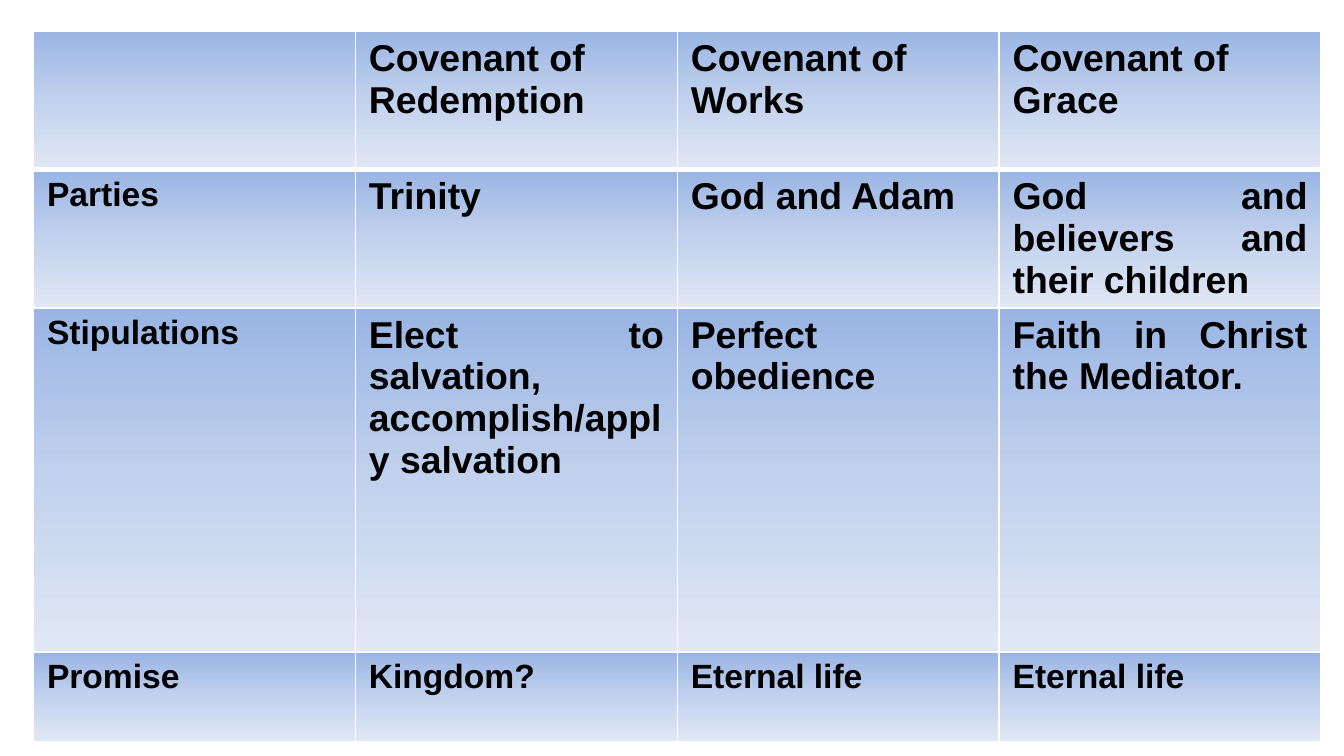
from dataclasses import dataclass

from lxml.etree import SubElement
from pptx import Presentation
from pptx.dml.color import RGBColor
from pptx.enum.text import PP_ALIGN
from pptx.oxml.ns import qn
from pptx.util import Inches, Pt


@dataclass(frozen=True)
class Theme:
    font: str = "Arial"
    text: str = "000000"
    border: str = "FFFFFF"
    gradient: tuple = ((0, "9AB5E4"), (50, "C2D1ED"), (100, "E1E8F5"))
    label_size: int = 18
    body_size: int = 20
    thin: int = 1
    thick: int = 3


THEME = Theme()

COVENANTS = [
    ["", "Covenant of Redemption", "Covenant of Works", "Covenant of Grace"],
    ["Parties", "Trinity", "God and Adam", "God and believers and their children"],
    ["Stipulations", "Elect to salvation, accomplish/apply salvation",
     "Perfect obedience", "Faith in Christ the Mediator."],
    ["Promise", "Kingdom?", "Eternal life", "Eternal life"],
]
ROW_HEIGHTS = [1.03, 0.94, 2.56, 0.67]
TABLE_WIDTH = 9.58
TABLE_HEIGHT = 5.24


def add_color(parent, color):
    SubElement(parent, qn("a:srgbClr"), val=color)


def set_borders(cell, top, bottom):
    tc_pr = cell._tc.get_or_add_tcPr()
    widths = {"L": THEME.thin, "R": THEME.thin, "T": top, "B": bottom}
    for side, width in widths.items():
        line = SubElement(tc_pr, qn(f"a:ln{side}"), w=str(int(Pt(width))))
        add_color(SubElement(line, qn("a:solidFill")), THEME.border)


def set_gradient(cell):
    fill = SubElement(cell._tc.get_or_add_tcPr(), qn("a:gradFill"), rotWithShape="1")
    stops = SubElement(fill, qn("a:gsLst"))
    for percent, color in THEME.gradient:
        add_color(SubElement(stops, qn("a:gs"), pos=str(percent * 1000)), color)
    SubElement(fill, qn("a:lin"), ang=str(90 * 60000), scaled="0")


def set_text(cell, text, size, align):
    p = cell.text_frame.paragraphs[0]
    p.alignment = align
    r = p.add_run()
    r.text = text
    r.font.name = THEME.font
    r.font.size = Pt(size)
    r.font.bold = True
    r.font.color.rgb = RGBColor.from_string(THEME.text)


def format_cell(cell, text, row, col):
    top = THEME.thick if row == 1 else THEME.thin
    bottom = THEME.thick if row == 0 else THEME.thin
    set_borders(cell, top, bottom)
    set_gradient(cell)
    if text:
        is_small = col == 0 or row == len(COVENANTS) - 1
        size = THEME.label_size if is_small else THEME.body_size
        align = PP_ALIGN.JUSTIFY if row and col else PP_ALIGN.LEFT
        set_text(cell, text, size, align)


def add_covenant_table(s):
    frame = s.shapes.add_table(len(COVENANTS), len(COVENANTS[0]),
                               Inches(0.25), Inches(0.23),
                               Inches(TABLE_WIDTH), Inches(TABLE_HEIGHT))
    table = frame.table
    table.horz_banding = False
    for row, height in zip(table.rows, ROW_HEIGHTS):
        row.height = Inches(height)
    frame.height = Inches(TABLE_HEIGHT)
    for i, texts in enumerate(COVENANTS):
        for j, text in enumerate(texts):
            format_cell(table.cell(i, j), text, i, j)


def main():
    prs = Presentation()
    prs.slide_width = Inches(10)
    prs.slide_height = prs.slide_width * 9 // 16
    s = prs.slides.add_slide(prs.slide_layouts[6])
    add_covenant_table(s)
    prs.save("out.pptx")


if __name__ == "__main__":
    main()
